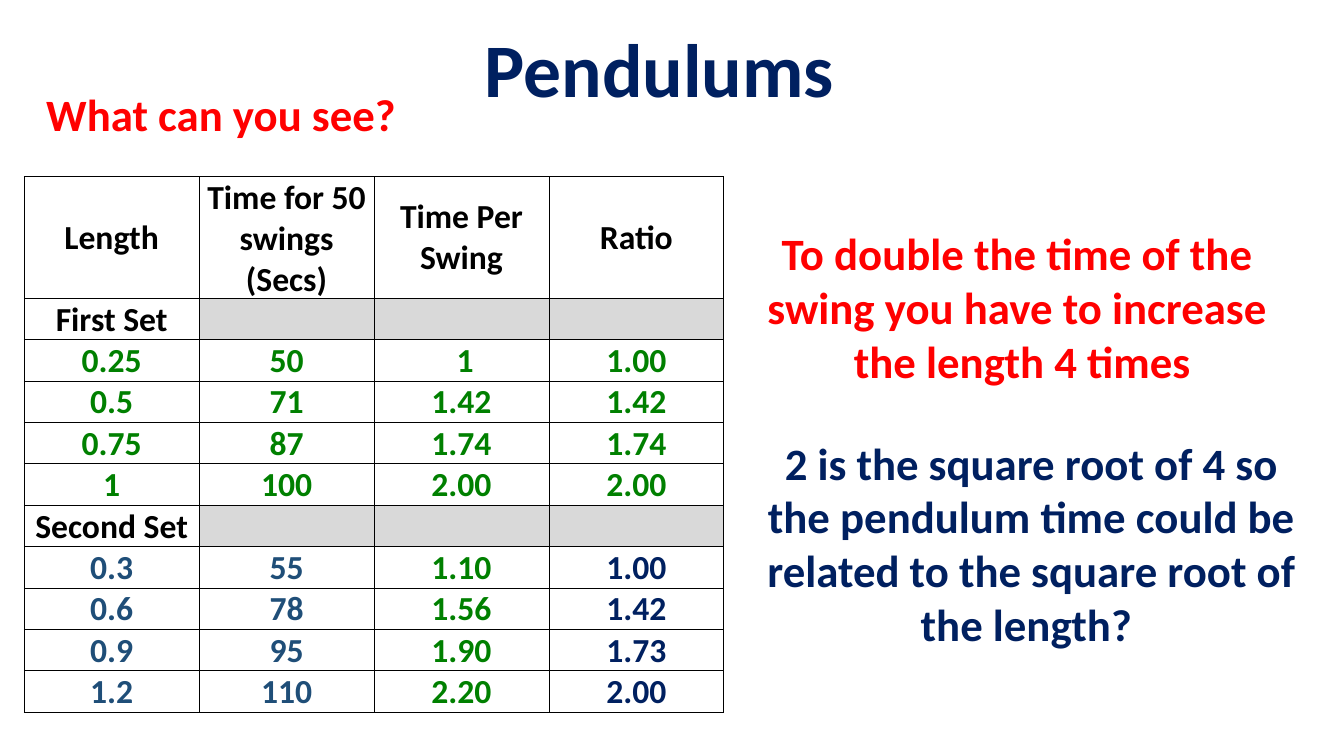
from lxml import etree
from pptx import Presentation
from pptx.dml.color import RGBColor
from pptx.enum.text import MSO_ANCHOR as Anchor, MSO_AUTO_SIZE as AutoSize, PP_ALIGN as Align
from pptx.oxml.ns import qn
from pptx.util import Inches, Pt

COLORS = {
    "navy": "002060",
    "red": "FF0000",
    "green": "008000",
    "blue": "1F4E78",
    "black": "000000",
    "gray": "D9D9D9",
}
HEADINGS = ["Length", "Time for 50 swings (Secs)", "Time Per Swing", "Ratio"]
FIRST_SET = [
    ["0.25", "50", " 1", "1.00"],
    ["0.5", "71", "1.42", "1.42"],
    ["0.75", "87", "1.74", "1.74"],
    ["1", "100", "2.00", "2.00"],
]
SECOND_SET = [
    ["0.3", "55", "1.10", "1.00"],
    ["0.6", "78", "1.56", "1.42"],
    ["0.9", "95", "1.90", "1.73"],
    ["1.2", "110", "2.20", "2.00"],
]
COLUMN_WIDTH = 1.735
HEADER_HEIGHT, ROW_HEIGHT = 1.21, 0.41


def style_paragraph(para, size, color, align):
    para.alignment = align
    para.font.name = "Calibri"
    para.font.size = Pt(size)
    para.font.bold = True
    para.font.color.rgb = RGBColor.from_string(COLORS[color])


def place(shape, left, top, width, height):
    shape.left, shape.top = Inches(left), Inches(top)
    shape.width, shape.height = Inches(width), Inches(height)


def add_title(page, text):
    title = page.shapes.title
    place(title, 4.69, 0.17, 3.7, 1.01)
    frame = title.text_frame
    frame.text = text
    frame.word_wrap = False
    frame.auto_size = AutoSize.NONE
    frame.vertical_anchor = Anchor.TOP
    style_paragraph(frame.paragraphs[0], 54, "navy", Align.CENTER)


def add_note(page, text, area, color, align=Align.CENTER, wrap=False):
    box = page.shapes.add_textbox(*map(Inches, area))
    frame = box.text_frame
    frame.word_wrap = wrap
    frame.auto_size = AutoSize.SHAPE_TO_FIT_TEXT
    frame.text = text
    para = frame.paragraphs[0]
    style_paragraph(para, 32, color, align)


def add_borders(cell):
    properties = cell._tc.get_or_add_tcPr()
    for side in ("lnL", "lnR", "lnT", "lnB"):
        line = etree.SubElement(properties, qn(f"a:{side}"), w=str(Pt(0.5)))
        fill = etree.SubElement(line, qn("a:solidFill"))
        etree.SubElement(fill, qn("a:srgbClr"), val=COLORS["black"])


def fill_cell(cell, text, color, anchor):
    """Format one cell; a cell without text is shaded."""
    add_borders(cell)
    cell.margin_left = cell.margin_right = cell.margin_top = Inches(0.01)
    cell.margin_bottom = 0
    cell.vertical_anchor = anchor
    if text:
        cell.fill.background()
        cell.text = text
        style_paragraph(cell.text_frame.paragraphs[0], 24, color, Align.CENTER)
    else:
        cell.fill.solid()
        cell.fill.fore_color.rgb = RGBColor.from_string(COLORS["gray"])


def add_results_table(page):
    black, green = ["black"] * 4, ["green"] * 4
    second_colors = ["blue", "blue", "green", "navy"]
    rows = [(HEADINGS, black), (["First Set", "", "", ""], black)]
    rows += [(values, green) for values in FIRST_SET]
    rows += [(["Second Set", "", "", ""], black)]
    rows += [(values, second_colors) for values in SECOND_SET]

    height = HEADER_HEIGHT + ROW_HEIGHT * (len(rows) - 1)
    table = page.shapes.add_table(
        len(rows), len(HEADINGS), Inches(0.24), Inches(1.75),
        Inches(COLUMN_WIDTH * len(HEADINGS)), Inches(height),
    ).table
    table.first_row = table.horz_banding = False
    for column in table.columns:
        column.width = Inches(COLUMN_WIDTH)
    for row_index, (values, colors) in enumerate(rows):
        table.rows[row_index].height = Inches(ROW_HEIGHT if row_index else HEADER_HEIGHT)
        for column_index, (value, color) in enumerate(zip(values, colors)):
            at_bottom = row_index > 1 and column_index == 0
            anchor = Anchor.BOTTOM if at_bottom else Anchor.MIDDLE
            fill_cell(table.cell(row_index, column_index), value, color, anchor)


def main():
    deck = Presentation()
    deck.slide_width, deck.slide_height = Inches(13.33), Inches(7.5)
    page = deck.slides.add_slide(deck.slide_layouts[5])
    add_title(page, "Pendulums")
    add_note(page, "What can you see?", (0.36, 0.81, 3.83, 0.64), "red", Align.LEFT)
    add_note(
        page,
        "To double the time of the \vswing you have to increase \vthe length 4 times",
        (7.49, 2.19, 5.3, 1.72), "red",
    )
    add_note(
        page,
        "2 is the square root of 4 so the pendulum time could be "
        "related to the square root of the length? ",
        (7.49, 4.27, 5.48, 2.26), "navy", wrap=True,
    )
    add_results_table(page)
    deck.save("out.pptx")


if __name__ == "__main__":
    main()
